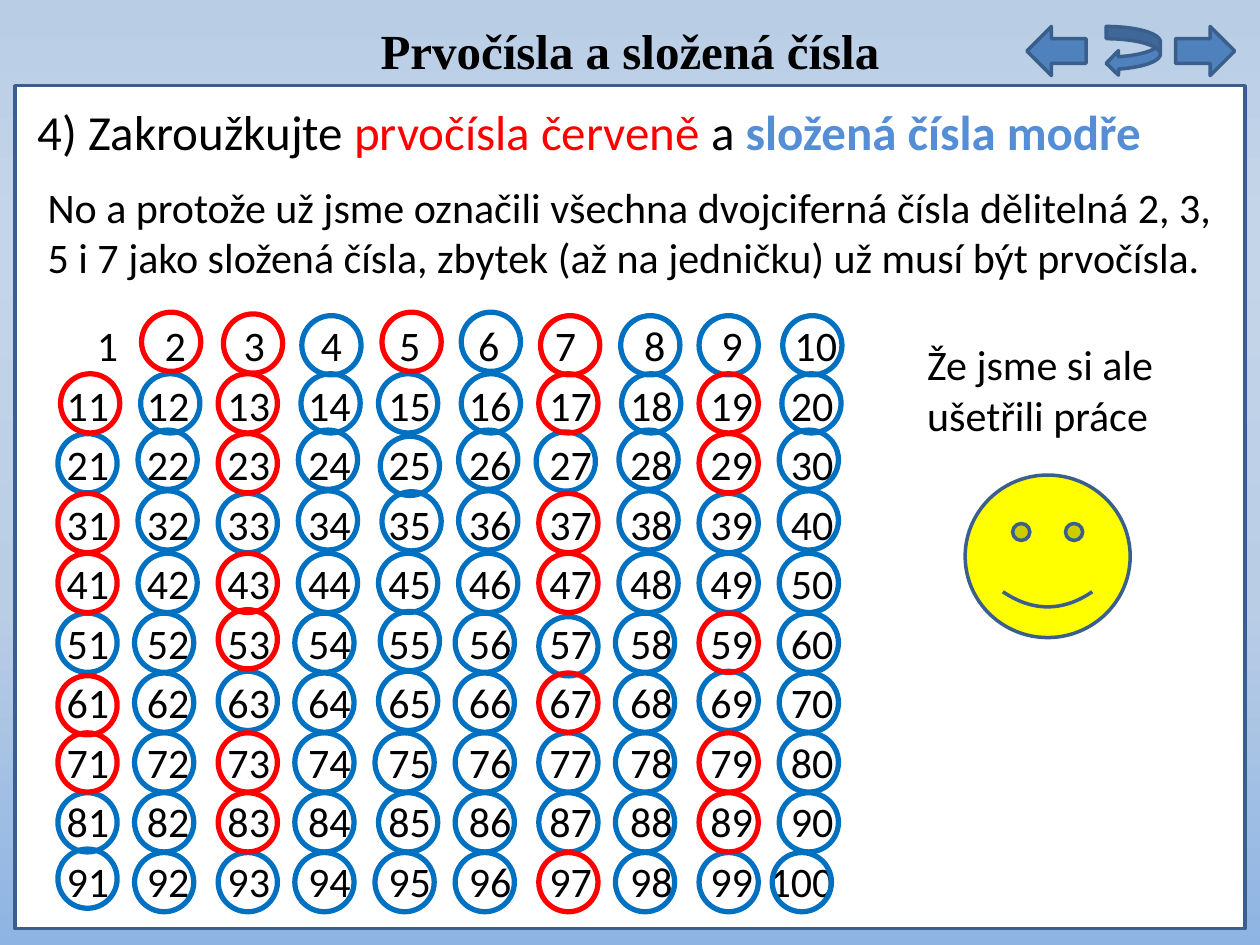
import dataclasses

import pptx
import pptx.dml.color
import pptx.enum.shapes
import pptx.enum.text
import pptx.oxml.ns
import pptx.util
from lxml import etree

Pt = pptx.util.Pt
MSO_SHAPE = pptx.enum.shapes.MSO_SHAPE
qn = pptx.oxml.ns.qn


@dataclasses.dataclass(frozen=True)
class Theme:
    black: str = "000000"
    white: str = "FFFFFF"
    red: str = "FF0000"
    blue: str = "0070C0"
    light_blue: str = "558ED5"
    button: str = "4F81BD"
    outline: str = "3A5F8C"
    yellow: str = "FFFF00"
    sky: tuple = ((0, "B9CDE5"), (25, "C5D5E9"), (64, "B9CDE5"), (100, "8EB4E3"))
    body_font: str = "Calibri"
    title_font: str = "Times New Roman"
    heading_size: int = 28
    body_size: int = 24


THEME = Theme()

RING_SIZE = 33.84
RING_LEFT, RING_TOP = 33.1, 179.4
RING_PITCH_X, RING_PITCH_Y = 45.8, 34.2
ROW_TOP, ROW_PITCH = 179.3, 34
ROW_TABS = [24.3 + 46 * i for i in range(1, 10)]
FIRST_ROW_TABS = [51, 96, 140, 185, 230, 274, 325, 369, 423]
NUDGES = {
    2: (2, -1), 3: (3, 0), 4: (2, 1), 5: (2, -1), 6: (1.5, -1), 7: (1, 1),
    8: (1, 1), 9: (0, 1), 10: (2, 1), 11: (1.5, 0), 25: (1, 1.5),
    27: (-1.5, -1), 35: (2, -1), 53: (0, -2), 55: (1, -1), 57: (0, 2),
    61: (0, 1.5), 63: (0, -1), 65: (0, -1), 69: (0, -1), 75: (-2, 0),
    91: (0, -2), 95: (-2, 0), 100: (-4, 0),
}


def rgb(value):
    return pptx.dml.color.RGBColor.from_string(value)


def is_prime(n):
    return n > 1 and all(n % d for d in range(2, int(n ** 0.5) + 1))


def paint_background(s):
    s.background.fill.gradient()
    grad = s.element.find(".//" + qn("a:gradFill"))
    for child in list(grad):
        grad.remove(child)
    stops = etree.SubElement(grad, qn("a:gsLst"))
    for pos, color in THEME.sky:
        stop = etree.SubElement(stops, qn("a:gs"), pos=str(pos * 1000))
        etree.SubElement(stop, qn("a:srgbClr"), val=color)
    etree.SubElement(grad, qn("a:lin"), ang="5400000", scaled="0")


def add_shape(s, kind, left, top, width, height, fill=None, line=THEME.outline, weight=2):
    sp = s.shapes.add_shape(kind, Pt(left), Pt(top), Pt(width), Pt(height))
    sp.shadow.inherit = False
    if fill:
        sp.fill.solid()
        sp.fill.fore_color.rgb = rgb(fill)
    else:
        sp.fill.background()
    sp.line.color.rgb = rgb(line)
    sp.line.width = Pt(weight)
    return sp


def format_run(r, size, color=THEME.black, bold=False, font=THEME.body_font):
    r.font.name = font
    r.font.size = Pt(size)
    r.font.bold = bold
    r.font.color.rgb = rgb(color)


def add_text(s, left, top, width, height, parts, size=THEME.body_size):
    sp = s.shapes.add_textbox(Pt(left), Pt(top), Pt(width), Pt(height))
    tf = sp.text_frame
    tf.word_wrap = True
    p = tf.paragraphs[0]
    for text, color, bold in parts:
        r = p.add_run()
        r.text = text
        format_run(r, size, color, bold)
    return sp


def set_title(s, text):
    sp = s.shapes.title
    sp.left, sp.top, sp.width, sp.height = Pt(8.64), Pt(7.92), Pt(702.72), Pt(41)
    tf = sp.text_frame
    tf.text = text
    tf.auto_size = pptx.enum.text.MSO_AUTO_SIZE.NONE
    tf.vertical_anchor = pptx.enum.text.MSO_ANCHOR.TOP
    p = tf.paragraphs[0]
    p.alignment = pptx.enum.text.PP_ALIGN.CENTER
    format_run(p.runs[0], THEME.heading_size, bold=True, font=THEME.title_font)


def add_number_row(s, row):
    left, width, tabs = (48.24, 448, FIRST_ROW_TABS) if row == 0 else (30.96, 556, ROW_TABS)
    text = "\t".join(str(10 * row + i) for i in range(1, 11))
    sp = add_text(s, left, ROW_TOP + ROW_PITCH * row, width, 45.4,
                  [(text, THEME.black, False)])
    p_pr = sp.text_frame.paragraphs[0]._p.get_or_add_pPr()
    tab_list = etree.SubElement(p_pr, qn("a:tabLst"))
    for pos in tabs:
        etree.SubElement(tab_list, qn("a:tab"), pos=str(int(Pt(pos))), algn="r")


def ring_drift(row, col):
    if col % 2 == 0:
        return 0, 0
    dx = 1.5 if row == 1 else -2 if row >= 5 and col < 9 else 0
    dy = {2: -2, 3: -1.5}.get(row, 0)
    return dx, dy


def add_ring(s, n, color):
    row, col = divmod(n - 1, 10)
    dx, dy = NUDGES.get(n, ring_drift(row, col))
    add_shape(s, MSO_SHAPE.OVAL, RING_LEFT + RING_PITCH_X * col + dx,
              RING_TOP + RING_PITCH_Y * row + dy, RING_SIZE, RING_SIZE,
              line=color, weight=3)


def add_buttons(s):
    for kind, left, width in ((MSO_SHAPE.LEFT_ARROW, 586.8, 33.84),
                              (MSO_SHAPE.CURVED_LEFT_ARROW, 632.16, 30.96),
                              (MSO_SHAPE.RIGHT_ARROW, 671.76, 33.84)):
        add_shape(s, kind, left, 15.12, width, 28.08, THEME.button)


def main():
    prs = pptx.Presentation()
    prs.slide_width, prs.slide_height = Pt(720), Pt(540)
    s = prs.slides.add_slide(prs.slide_layouts[5])
    paint_background(s)
    add_shape(s, MSO_SHAPE.RECTANGLE, 8.64, 48.96, 702.72, 481.68, THEME.white)
    set_title(s, "Prvočísla a složená čísla")
    add_buttons(s)
    add_text(s, 14.4, 54.72, 702.72, 38.88, [
        ("4) Zakroužkujte ", THEME.black, False),
        ("prvočísla červeně", THEME.red, False),
        (" a ", THEME.black, False),
        ("složená čísla modře", THEME.light_blue, True),
    ], THEME.heading_size)
    add_text(s, 20.16, 100.08, 679.68, 68.4, [
        ("No a protože už jsme označili všechna dvojciferná čísla dělitelná 2, 3, "
         "5 i 7 jako složená čísla, zbytek (až na jedničku) už musí být prvočísla.",
         THEME.black, False)])
    for row in range(10):
        add_number_row(s, row)
    for prime, color in ((False, THEME.blue), (True, THEME.red)):
        for n in range(2, 101):
            if is_prime(n) == prime:
                add_ring(s, n, color)
    add_text(s, 522.72, 190.08, 147.6, 73.44,
             [("Že jsme si ale ušetřili práce", THEME.black, False)])
    add_shape(s, MSO_SHAPE.SMILEY_FACE, 551.52, 271.44, 94.32, 92.88, THEME.yellow)
    prs.save("out.pptx")


if __name__ == "__main__":
    main()
